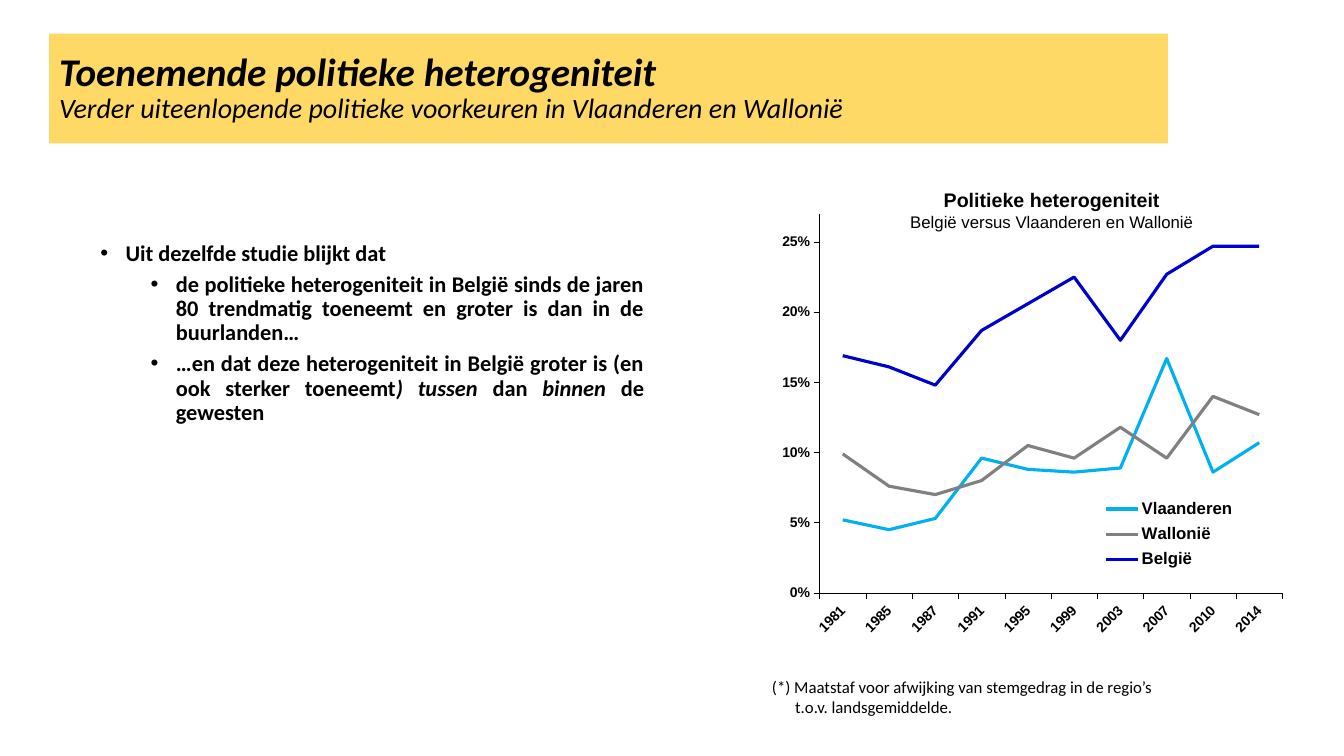
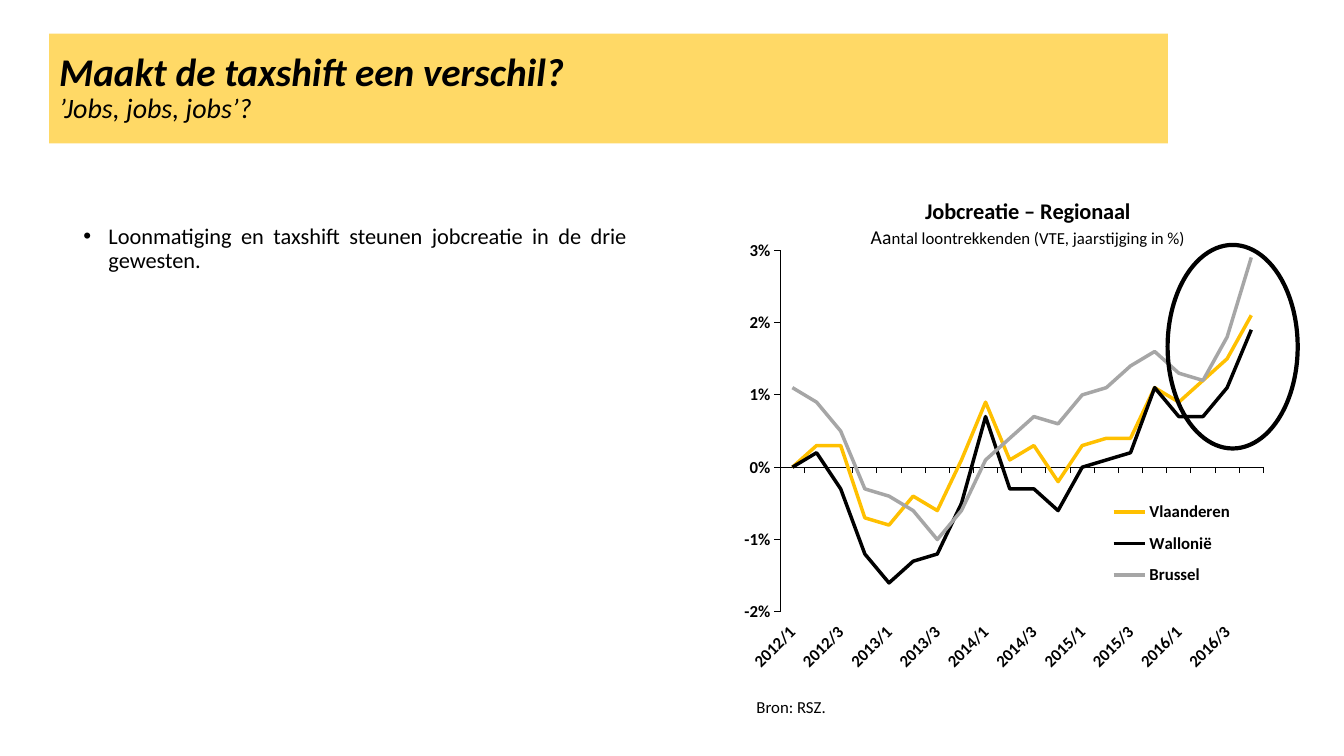
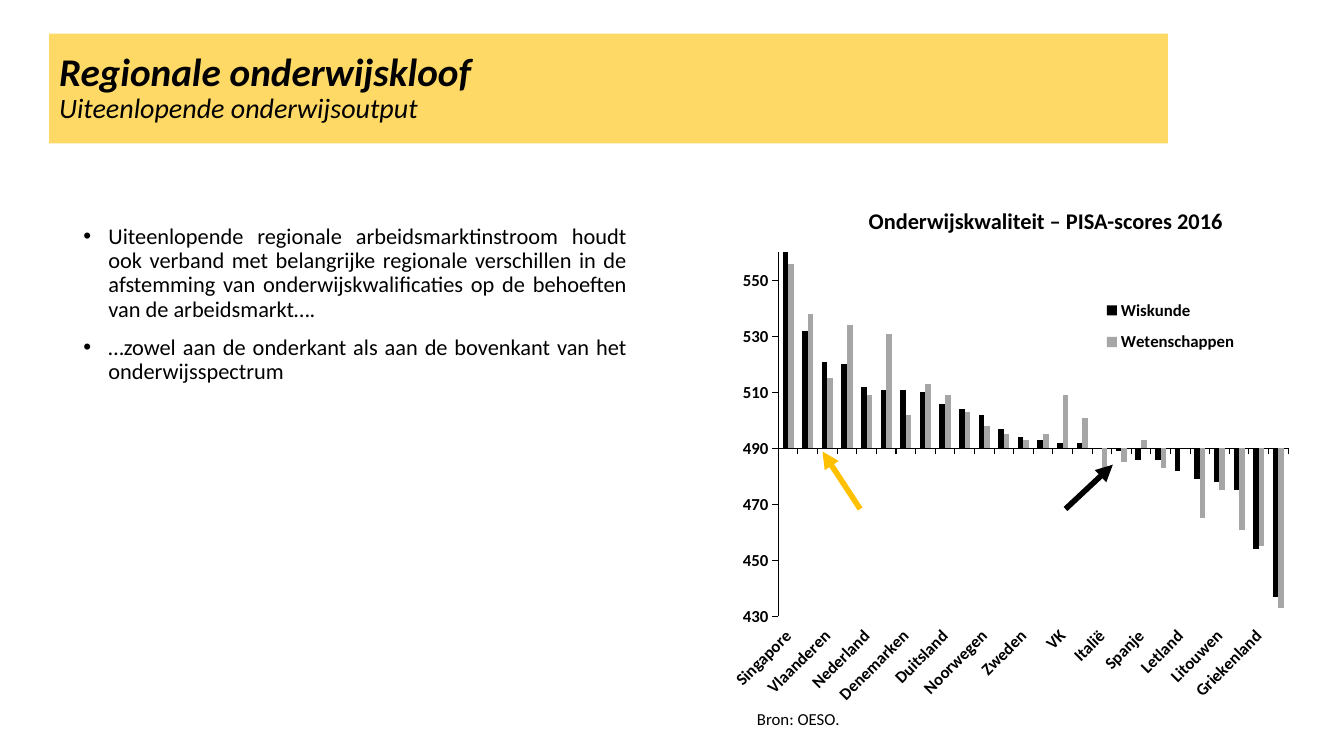
"""Builds three slides on political, job and education gaps between regions."""
from collections import namedtuple

from lxml.etree import Element, SubElement
from pptx import Presentation
from pptx.chart.data import CategoryChartData
from pptx.dml.color import RGBColor
from pptx.enum.chart import XL_CHART_TYPE as ChartType
from pptx.enum.chart import XL_LEGEND_POSITION as LegendPosition
from pptx.enum.chart import XL_TICK_LABEL_POSITION as LabelPosition
from pptx.enum.chart import XL_TICK_MARK as TickMark
from pptx.enum.shapes import MSO_CONNECTOR as Connector
from pptx.enum.shapes import MSO_SHAPE as Preset
from pptx.enum.text import MSO_ANCHOR as Anchor
from pptx.enum.text import PP_ALIGN as Align
from pptx.oxml.ns import qn
from pptx.util import Inches, Pt

BLACK = RGBColor(0x00, 0x00, 0x00)
BAND = RGBColor(0xFF, 0xD9, 0x66)
SKY = RGBColor(0x00, 0xB0, 0xF0)
DARK_GREY = RGBColor(0x80, 0x80, 0x80)
BLUE = RGBColor(0x00, 0x00, 0xCC)
GOLD = RGBColor(0xFF, 0xC0, 0x00)
GREY = RGBColor(0xA6, 0xA6, 0xA6)

WIDTH, HEIGHT = Pt(960), Pt(540)
COLUMN, ROW = WIDTH / 100, HEIGHT / 100
BAND_BOX = (3.66, 4.45, 83.25, 14.53)
BODY_BOX = (5.46, 29.15, 41.93, 63.47)

Line = namedtuple("Line", "text size bold italic font align level margin spacing lead",
                  defaults=(12, False, False, "Calibri", Align.LEFT, None, 0, 1, ""))
Series = namedtuple("Series", "name color values")


def place(*shares):
    return [round(share * unit) for share, unit in zip(shares, (COLUMN, ROW) * 2)]


def write(frame, lines):
    for number, line in enumerate(lines):
        paragraph = frame.add_paragraph() if number else frame.paragraphs[0]
        paragraph.alignment = line.align
        paragraph.line_spacing = line.spacing
        properties = paragraph._p.get_or_add_pPr()
        if line.margin:
            properties.set("marL", str(Inches(line.margin)))
        if line.level is not None:
            paragraph.level = line.level
            properties.set("marL", str(Inches(0.25 + 0.5 * line.level)))
            properties.set("indent", str(Inches(-0.25)))
            if number:
                paragraph.space_before = Pt(10 - 5 * line.level)
            SubElement(properties, qn("a:buFont"), typeface="Arial")
            SubElement(properties, qn("a:buChar"), char="•")
        font = paragraph.font
        font.name, font.size = line.font, Pt(line.size)
        font.bold, font.italic = line.bold, line.italic
        font.color.rgb = BLACK
        if line.lead:
            run = paragraph.add_run()
            run.text = line.lead
            run.font.size = Pt(line.size + 2)
        for part, text in enumerate(line.text.split("*") if line.level is not None else [line.text]):
            run = paragraph.add_run()
            run.text = text
            if part % 2:
                run.font.italic = True


bullet = {"size": 16, "align": Align.JUSTIFY, "spacing": 0.9}

politics = {
    "title": "Toenemende politieke heterogeniteit",
    "subtitle": "Verder uiteenlopende politieke voorkeuren in Vlaanderen en Wallonië",
    "texts": [
        ((6.73, 31.35, 41.93, 63.47), True, [
            Line("Uit dezelfde studie blijkt dat", bold=True, level=0, **bullet),
            Line("de politieke heterogeniteit in België sinds de jaren 80 trendmatig toeneemt "
                 "en groter is dan in de buurlanden…", bold=True, level=1, **bullet),
            Line("…en dat deze heterogeniteit in België groter is (en ook sterker toeneemt"
                 "*) tussen *dan *binnen* de gewesten", bold=True, level=1, **bullet)]),
        ((56.7, 88.8, 30.4, 6.67), False, [
            Line("(*) Maatstaf voor afwijking van stemgedrag in de regio’s"),
            Line("t.o.v. landsgemiddelde.", margin=0.23)]),
        ((66.9, 24.25, 22.73, 7.2), False, [
            Line("Politieke heterogeniteit", 14, True, font="Arial", align=Align.CENTER),
            Line("België versus Vlaanderen en Wallonië", font="Arial", align=Align.CENTER)])],
    "kind": ChartType.LINE, "font": "Arial", "axis_size": 10, "axis_line": 0.22,
    "series_line": 2.25, "format": "0%", "scale": (0, 0.27, 0.05), "crossing": 0, "skip": 1,
    "chart": (56.55, 26.53, 40.8, 71.47),
    "plot": (60.98, 28.3, 34.44, 50.13),
    "legend": (81.75, 65.2, 10.5, 10.9),
    "categories": "1981 1985 1987 1991 1995 1999 2003 2007 2010 2014".split(),
    "series": [
        Series("Vlaanderen", SKY,
               (0.052, 0.045, 0.053, 0.096, 0.088, 0.086, 0.089, 0.167, 0.086, 0.107)),
        Series("Wallonië", DARK_GREY,
               (0.099, 0.076, 0.07, 0.08, 0.105, 0.096, 0.118, 0.096, 0.14, 0.127)),
        Series("België", BLUE,
               (0.169, 0.161, 0.148, 0.187, 0.206, 0.225, 0.18, 0.227, 0.247, 0.247))],
}

jobs = {
    "title": "Maakt de taxshift een verschil?",
    "subtitle": "’Jobs, jobs, jobs’?",
    "texts": [
        (BODY_BOX, True, [
            Line("Loonmatiging en taxshift steunen jobcreatie in de drie gewesten.",
                 level=0, **bullet)]),
        ((55.55, 91.47, 7.05, 4), False, [Line("Bron: RSZ.")])],
    "kind": ChartType.LINE, "font": "Calibri", "axis_size": 12, "axis_line": 0.75,
    "series_line": 2.5, "format": "0%", "scale": (-0.02, 0.03, 0.01), "crossing": 0, "skip": 2,
    "chart": (50.4, 22.53, 45.6, 73.2),
    "plot": (58.06, 33.1, 35.95, 47.85),
    "legend": (82.3, 64.9, 9.8, 14),
    "chart_title": [
        Line("Jobcreatie – Regionaal", 16, True, align=Align.CENTER),
        Line("ntal loontrekkenden (VTE, jaarstijging in %)", align=Align.CENTER, lead="Aa")],
    "title_box": (64.55, 25.6, 24, 8),
    "categories": [f"{year}/{quarter}" for year in range(2012, 2017) for quarter in range(1, 5)],
    "series": [
        Series("Vlaanderen", GOLD,
               (0, 0.003, 0.003, -0.007, -0.008, -0.004, -0.006, 0.001, 0.009, 0.001,
                0.003, -0.002, 0.003, 0.004, 0.004, 0.011, 0.009, 0.012, 0.015, 0.021)),
        Series("Wallonië", BLACK,
               (0, 0.002, -0.003, -0.012, -0.016, -0.013, -0.012, -0.005, 0.007, -0.003,
                -0.003, -0.006, 0, 0.001, 0.002, 0.011, 0.007, 0.007, 0.011, 0.019)),
        Series("Brussel", GREY,
               (0.011, 0.009, 0.005, -0.003, -0.004, -0.006, -0.01, -0.006, 0.001, 0.004,
                0.007, 0.006, 0.01, 0.011, 0.014, 0.016, 0.013, 0.012, 0.018, 0.029))],
    "ellipses": [(86.88, 32.4, 9.68, 26.93)],
}

education = {
    "title": "Regionale onderwijskloof",
    "subtitle": "Uiteenlopende onderwijsoutput",
    "texts": [
        (BODY_BOX, True, [
            Line("Uiteenlopende regionale arbeidsmarktinstroom houdt ook verband met belangrijke "
                 "regionale verschillen in de afstemming van onderwijskwalificaties op de "
                 "behoeften van de arbeidsmarkt….", level=0, **bullet),
            Line("…zowel aan de onderkant als aan de bovenkant van het onderwijsspectrum",
                 level=0, **bullet)]),
        ((63.9, 26.8, 28.58, 4.93), False, [
            Line("Onderwijskwaliteit – PISA-scores 2016", 16, True)]),
        ((55.58, 93.07, 12.08, 4), True, [Line("Bron: OESO.")])],
    "kind": ChartType.COLUMN_CLUSTERED, "font": "Calibri", "axis_size": 12, "axis_line": 0.75,
    "format": "General", "scale": (430, 560, 20), "crossing": 490, "skip": 2,
    "chart": (54.45, 29.2, 43, 70),
    "plot": (57.9, 33.38, 37.95, 48.17),
    "legend": (81.8, 38.2, 10.6, 9.9),
    "categories": (
        "Singapore Japan Vlaanderen Estland Nederland Finland Denemarken Slovenië Duitsland "
        "Ierland Noorwegen Oostenrijk Zweden Frankrijk VK Portugal Italië Wallonië/BXL Spanje "
        "Luxemburg Letland Malta Litouwen Slowakije Griekenland Cyprus").split(),
    "series": [
        Series("Wiskunde", BLACK,
               (564, 532, 521, 520, 512, 511, 511, 510, 506, 504, 502, 497, 494,
                493, 492, 492, 490, 489, 486, 486, 482, 479, 478, 475, 454, 437)),
        Series("Wetenschappen", GREY,
               (556, 538, 515, 534, 509, 531, 502, 513, 509, 503, 498, 495, 493,
                495, 509, 501, 481, 485, 493, 483, 490, 465, 475, 461, 455, 433))],
    "arrows": [(GOLD, (64, 67.33, 61.2, 59.73)), (BLACK, (79.28, 67.33, 82.8, 61.47))],
}

presentation = Presentation()
presentation.slide_width, presentation.slide_height = WIDTH, HEIGHT

for content in (politics, jobs, education):
    slide = presentation.slides.add_slide(presentation.slide_layouts[6])

    band = slide.shapes.add_shape(Preset.RECTANGLE, *place(*BAND_BOX))
    band.shadow.inherit = False
    band.fill.solid()
    band.fill.fore_color.rgb = BAND
    band.line.fill.background()
    band.text_frame.vertical_anchor = Anchor.MIDDLE
    write(band.text_frame, [Line(content["title"], 28, True, True, spacing=0.9),
                            Line(content["subtitle"], 20, False, True, spacing=0.9)])

    data = CategoryChartData(number_format=content["format"])
    data.categories = content["categories"]
    for series in content["series"]:
        data.add_series(series.name, series.values)
    chart = slide.shapes.add_chart(content["kind"], *place(*content["chart"]), data).chart
    chart.font.name, chart.font.size = content["font"], Pt(10)
    chart.font.color.rgb = BLACK
    chart.has_title = "chart_title" in content
    chart.has_legend = True
    legend = chart.legend
    legend.position = LegendPosition.RIGHT
    legend.include_in_layout = False

    plot = chart.plots[0]
    plot.vary_by_categories = False
    is_line = content["kind"] == ChartType.LINE
    if not is_line:
        plot.gap_width, plot.overlap = 150, 0
    for drawn, series in zip(plot.series, content["series"]):
        if is_line:
            drawn.smooth = False
            drawn.format.line.color.rgb = series.color
            drawn.format.line.width = Pt(content["series_line"])
        else:
            drawn.invert_if_negative = False
            drawn.format.fill.solid()
            drawn.format.fill.fore_color.rgb = series.color

    categories, values = chart.category_axis, chart.value_axis
    for axis in (categories, values):
        axis.has_major_gridlines = False
        axis.major_tick_mark, axis.minor_tick_mark = TickMark.OUTSIDE, TickMark.NONE
        axis.format.line.color.rgb = BLACK
        axis.format.line.width = Pt(content["axis_line"])
    for font, size in ((categories.tick_labels.font, content["axis_size"]),
                       (values.tick_labels.font, content["axis_size"]),
                       (legend.font, 12)):
        font.name, font.size, font.bold = content["font"], Pt(size), True
        font.color.rgb = BLACK
    values.minimum_scale, values.maximum_scale, values.major_unit = content["scale"]
    values.crosses_at = content["crossing"]
    values.tick_labels.number_format = content["format"]
    values.tick_labels.number_format_is_linked = False
    categories.tick_label_position = LabelPosition.LOW
    categories._element.xpath("c:txPr/a:bodyPr")[0].set("rot", "-2700000")
    skip = Element(qn("c:tickLblSkip"), val=str(content["skip"]))
    categories._element.xpath("c:noMultiLvlLbl")[0].addprevious(skip)

    plot_area = chart._chartSpace.xpath("c:chart/c:plotArea")[0]
    layouts = [(plot_area, content["plot"]), (legend._element, content["legend"])]
    if chart.has_title:
        write(chart.chart_title.text_frame, content["chart_title"])
        layouts.append((chart.chart_title._element, content["title_box"]))
    left, top, width, height = content["chart"]
    for element, box in layouts:
        for old_layout in element.xpath("c:layout"):
            element.remove(old_layout)
        layout = Element(qn("c:layout"))
        element.insert(len(element.xpath("c:tx|c:legendPos")), layout)
        manual = SubElement(layout, qn("c:manualLayout"))
        if element is plot_area:
            SubElement(manual, qn("c:layoutTarget"), val="inner")
        for mode in ("xMode", "yMode"):
            SubElement(manual, qn(f"c:{mode}"), val="edge")
        shares = ((box[0] - left) / width, (box[1] - top) / height,
                  box[2] / width, box[3] / height)
        for side, share in zip("xywh", shares):
            SubElement(manual, qn(f"c:{side}"), val=f"{share:.4f}")

    for box, wrap, lines in content["texts"]:
        frame = slide.shapes.add_textbox(*place(*box)).text_frame
        frame.word_wrap = wrap
        write(frame, lines)

    for box in content.get("ellipses", []):
        ellipse = slide.shapes.add_shape(Preset.OVAL, *place(*box))
        ellipse.shadow.inherit = False
        ellipse.fill.background()
        ellipse.line.color.rgb = BLACK
        ellipse.line.width = Pt(3)

    for color, ends in content.get("arrows", []):
        arrow = slide.shapes.add_connector(Connector.STRAIGHT, *place(*ends))
        arrow.line.color.rgb = color
        arrow.line.width = Pt(4)
        SubElement(arrow.line._get_or_add_ln(), qn("a:tailEnd"), type="triangle")
        SubElement(arrow._element.spPr, qn("a:effectLst"))

presentation.save("out.pptx")
